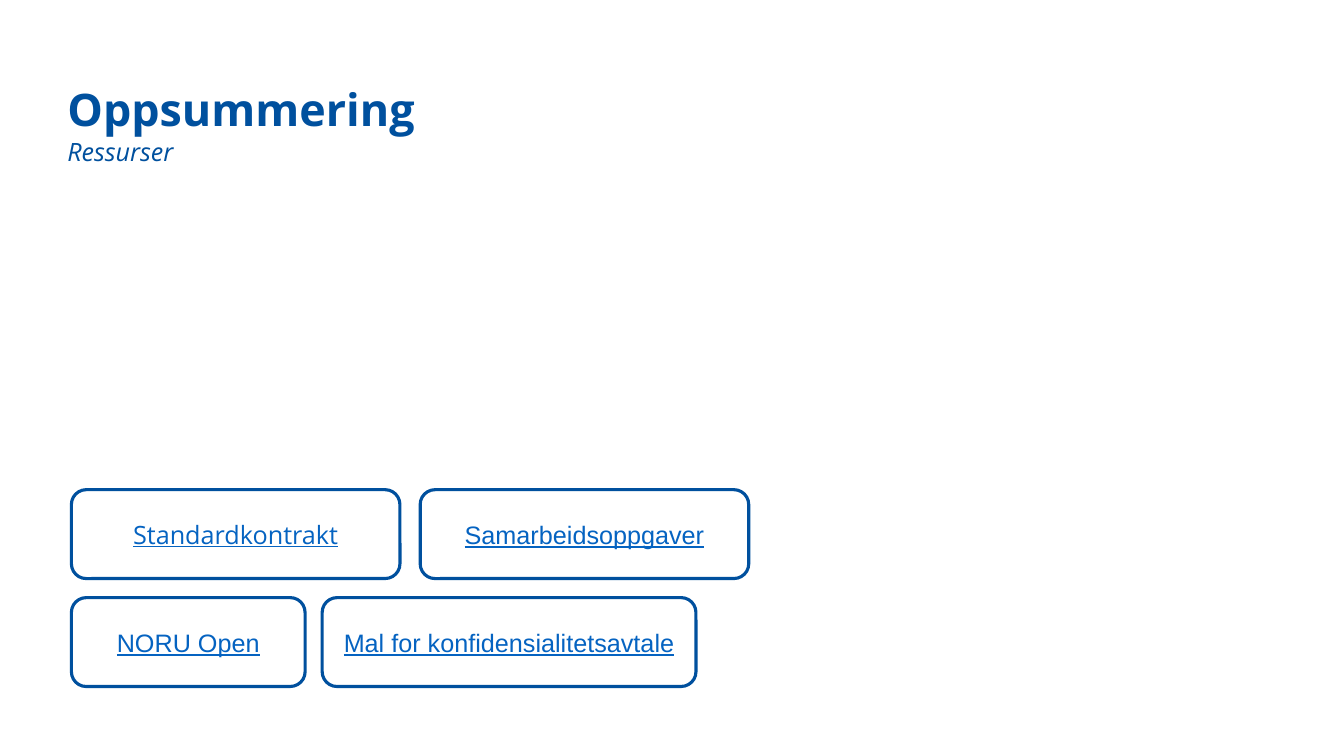
import pptx
import pptx.util
import pptx.dml.color
import pptx.enum.shapes
import pptx.enum.text

Cm, Pt = pptx.util.Cm, pptx.util.Pt
RGB = pptx.dml.color.RGBColor.from_string
ALIGN, ANCHOR = pptx.enum.text.PP_ALIGN, pptx.enum.text.MSO_ANCHOR

THEME = {
    "blue": RGB("00509E"),
    "link": RGB("0563C1"),
    "heading_font": "Open Sans",
    "body_font": "Arial",
    "title_size": Pt(32),
    "text_size": Pt(18),
    "border": Pt(2.25),
}
TITLE = "Oppsummering"
SUBTITLE = "Ressurser"
# Each row: gap between boxes, then (label, font, width), lengths in cm
ROWS = [
    (0.51, [("Standardkontrakt", "heading_font", 8.28),
            ("Samarbeidsoppgaver", "body_font", 8.28)]),
    (0.43, [("NORU Open", "body_font", 5.89),
            ("Mal for konfidensialitetsavtale", "body_font", 9.42)]),
]
LEFT, TOP, HEIGHT, ROW_STEP = 1.8, 12.34, 2.24, 2.72


def write(s, text, para_format, font_format, color, anchor):
    tf = s.text_frame
    tf.word_wrap = True
    tf.vertical_anchor = anchor
    p = tf.paragraphs[0]
    r = p.add_run()
    r.text = text
    for target, values in ((p, para_format), (r.font, font_format)):
        for name, value in values.items():
            setattr(target, name, value)
    r.font.color.rgb = color


def add_heading(slide, text, box, para_format, font_format, anchor):
    s = slide.shapes.add_textbox(*map(Cm, box))
    write(s, text, {"line_spacing": 0.9, **para_format},
          {"name": THEME["heading_font"], **font_format}, THEME["blue"], anchor)


def add_resource(slide, label, font, x, y, width):
    s = slide.shapes.add_shape(
        pptx.enum.shapes.MSO_SHAPE.ROUNDED_RECTANGLE,
        Cm(x), Cm(y), Cm(width), Cm(HEIGHT))
    s.shadow.inherit = False
    s.fill.background()
    s.line.color.rgb = THEME["blue"]
    s.line.width = THEME["border"]
    write(s, label, {"alignment": ALIGN.CENTER},
          {"name": THEME[font], "size": THEME["text_size"], "underline": True},
          THEME["link"], ANCHOR.MIDDLE)


def main():
    prs = pptx.Presentation()
    prs.slide_width, prs.slide_height = Cm(33.87), Cm(19.05)
    slide = prs.slides.add_slide(prs.slide_layouts[6])

    add_heading(slide, TITLE, (1.45, 1.75, 10.31, 1.8), {},
                {"size": THEME["title_size"], "bold": True}, ANCHOR.BOTTOM)
    add_heading(slide, SUBTITLE, (1.45, 3.4, 15.27, 1.14),
                {"space_before": Pt(10)},
                {"size": THEME["text_size"], "italic": True}, ANCHOR.TOP)

    for row, (gap, resources) in enumerate(ROWS):
        x = LEFT
        for label, font, width in resources:
            add_resource(slide, label, font, x, TOP + row * ROW_STEP, width)
            x += width + gap

    prs.save("out.pptx")


if __name__ == "__main__":
    main()
